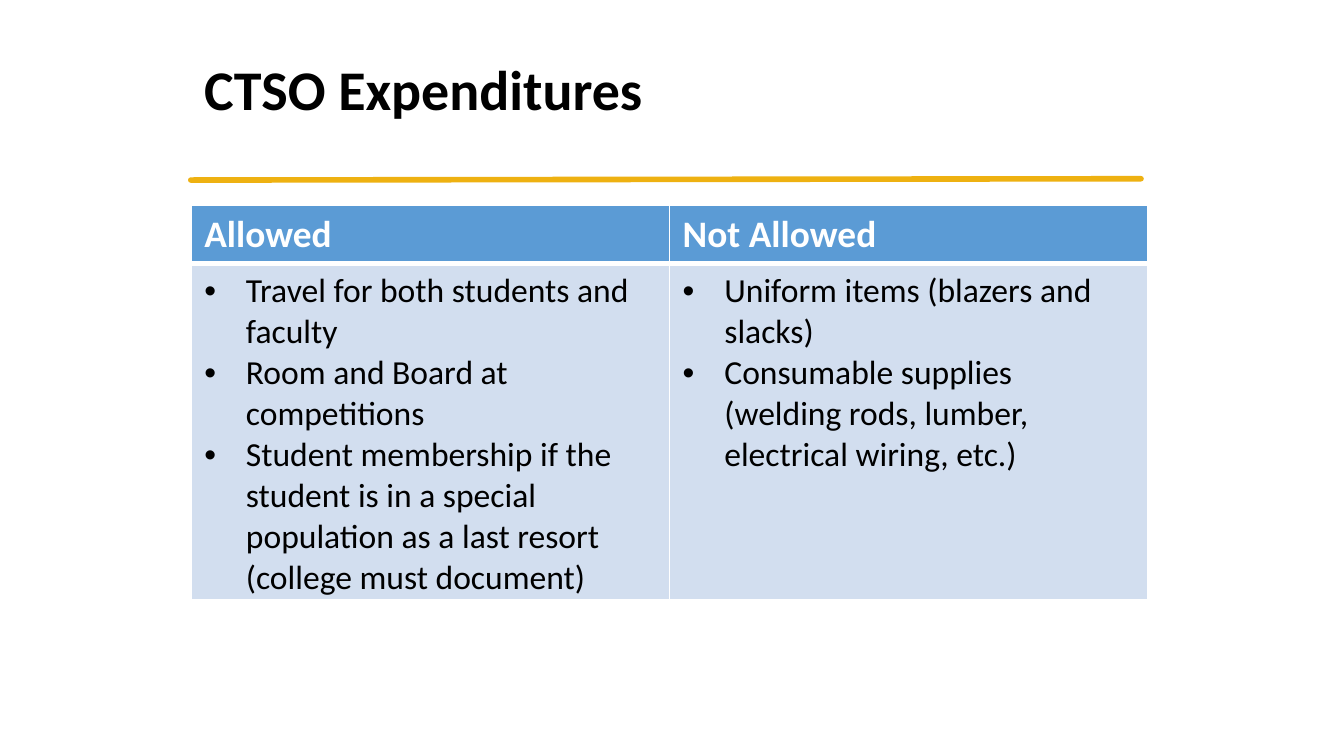
from lxml.etree import SubElement
from pptx import Presentation
from pptx.dml.color import RGBColor
from pptx.enum.shapes import MSO_CONNECTOR
from pptx.enum.text import MSO_ANCHOR
from pptx.oxml.ns import qn
from pptx.util import Inches, Pt

WHITE = RGBColor(0xFF, 0xFF, 0xFF)
BLACK = RGBColor(0, 0, 0)
GOLD = RGBColor(0xEE, 0xB1, 0x11)
BLUE = RGBColor(0x5B, 0x9B, 0xD5)
PALE_BLUE = RGBColor(0xD2, 0xDE, 0xEF)
FONT = "Calibri"
INDENT = Inches(0.31)
ROW_HEIGHT = Inches(0.41)

EXPENDITURES = {
    "Allowed": [
        "Travel for both students and faculty",
        "Room and Board at competitions",
        "Student membership if the student is in a special population "
        "as a last resort (college must document)",
    ],
    "Not Allowed": [
        "Uniform items (blazers and slacks)",
        "Consumable supplies (welding rods, lumber, electrical wiring, etc.)",
    ],
}


def add_run(p, text, size, color, bold=False):
    r = p.add_run()
    r.text = text
    r.font.name = FONT
    r.font.size = Pt(size)
    r.font.bold = bold
    r.font.color.rgb = color


def add_bullet(p):
    pPr = p._p.get_or_add_pPr()
    pPr.set("marL", str(INDENT))
    pPr.set("indent", str(-INDENT))
    SubElement(pPr, qn("a:buFont"), typeface="Arial")
    SubElement(pPr, qn("a:buChar"), char="•")


def style_cell(cell, color, top_width, bottom_width):
    tcPr = cell._tc.get_or_add_tcPr()
    for side, width in zip("LRTB", (1, 1, top_width, bottom_width)):
        ln = SubElement(tcPr, qn(f"a:ln{side}"), w=str(Pt(width)))
        fill = SubElement(ln, qn("a:solidFill"))
        SubElement(fill, qn("a:srgbClr"), val=str(WHITE))
    cell.fill.solid()
    cell.fill.fore_color.rgb = color


def add_title(s, text, left, top, width, height):
    tf = s.shapes.add_textbox(left, top, width, height).text_frame
    tf.word_wrap = True
    tf.vertical_anchor = MSO_ANCHOR.MIDDLE
    p = tf.paragraphs[0]
    p.line_spacing = 0.9
    add_run(p, text, 30, BLACK, bold=True)


def add_rule(s, left, top, width, height):
    line = s.shapes.add_connector(
        MSO_CONNECTOR.STRAIGHT, left, top + height, left + width, top)
    line.line.color.rgb = GOLD
    line.line.width = Pt(3)
    line.line._get_or_add_ln().set("cap", "rnd")
    SubElement(line._element.spPr, qn("a:effectLst"))


def add_expenditures(s, columns, left, top, width, height):
    frame = s.shapes.add_table(2, len(columns), left, top, width, height)
    table = frame.table
    for row in table.rows:
        row.height = ROW_HEIGHT
    for col, (heading, items) in enumerate(columns.items()):
        table.columns[col].width = width // len(columns)
        header, body = table.cell(0, col), table.cell(1, col)
        style_cell(header, BLUE, 1, 3)
        style_cell(body, PALE_BLUE, 3, 1)
        add_run(header.text_frame.paragraphs[0], heading, 20, WHITE, bold=True)
        tf = body.text_frame
        for i, item in enumerate(items):
            p = tf.add_paragraph() if i else tf.paragraphs[0]
            add_bullet(p)
            add_run(p, item, 18, BLACK)
    frame.height = height


def main():
    prs = Presentation()
    prs.slide_width = Inches(10)
    prs.slide_height = prs.slide_width * 9 // 16
    s = prs.slides.add_slide(prs.slide_layouts[6])
    left = Inches(1.42)
    add_rule(s, left, Inches(1.33), Inches(7.07), Inches(0.01))
    add_title(s, "CTSO Expenditures",
              left, Inches(0.14), Inches(8.05), Inches(1.09))
    add_expenditures(s, EXPENDITURES,
                     left, Inches(1.53), Inches(7.12), Inches(2.93))
    prs.save("out.pptx")


if __name__ == "__main__":
    main()
